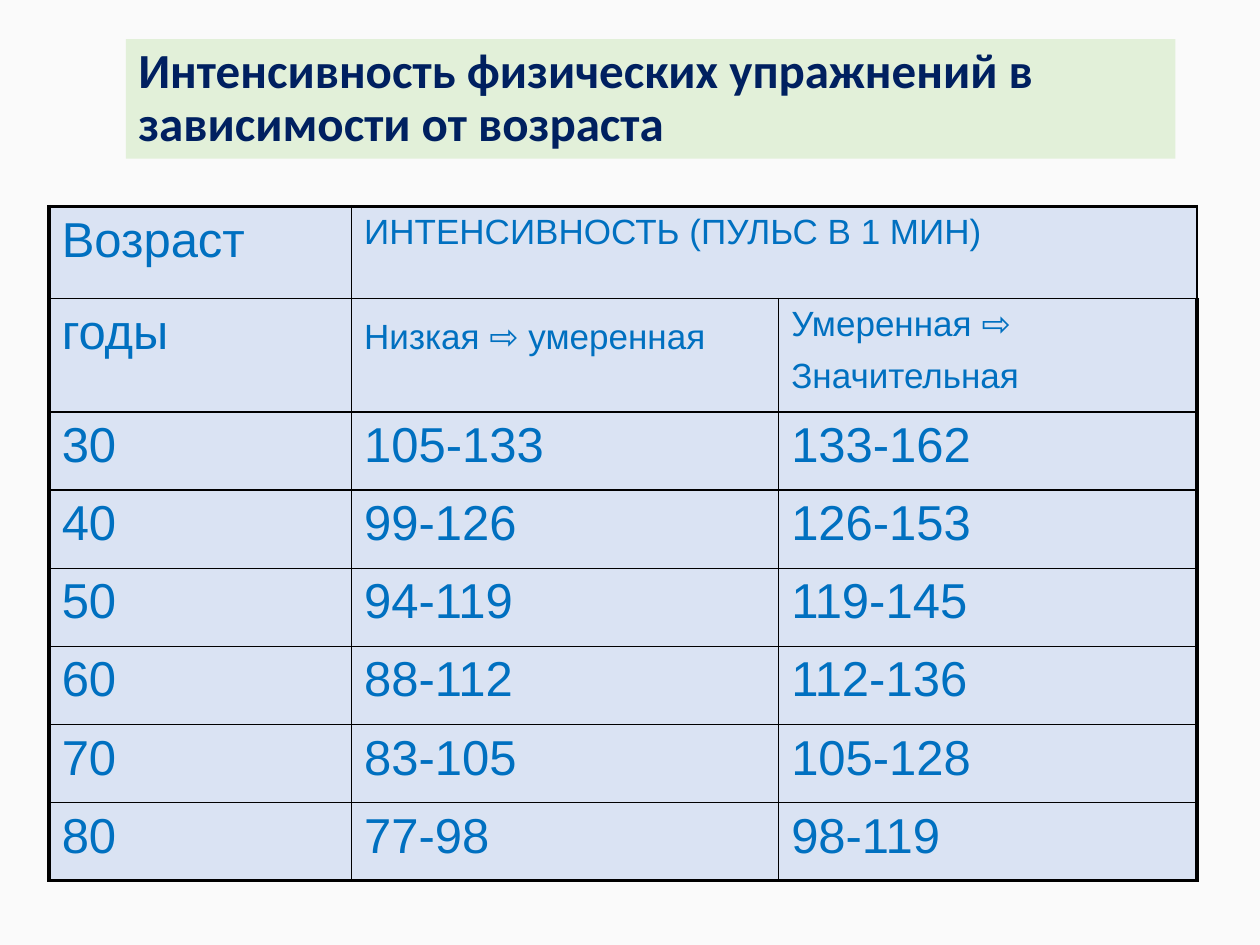
import lxml.etree
import pptx
import pptx.dml.color
import pptx.enum.text
import pptx.oxml.ns
import pptx.util

Inches, Pt = pptx.util.Inches, pptx.util.Pt
HUES = {"page": "FAFAFA", "band": "E2F0D9", "title": "002060",
        "cell": "DAE3F3", "text": "0070C0", "line": "000000"}
BIG, SMALL = 28, 20
THICK, THIN = 2.25, 1


class Deck:
    """Holds the style and the current slide."""

    def __init__(self):
        self.file = pptx.Presentation()
        self.file.slide_width, self.file.slide_height = Inches(10), Inches(7.5)
        self.slide = self.file.slides.add_slide(self.file.slide_layouts[6])
        self.paint(self.slide.background.fill, "page")

    def paint(self, fill, hue):
        fill.solid()
        fill.fore_color.rgb = pptx.dml.color.RGBColor.from_string(HUES[hue])

    def style(self, font, face, size, hue, bold=False):
        font.name, font.size, font.bold = face, Pt(size), bold
        font.color.rgb = pptx.dml.color.RGBColor.from_string(HUES[hue])

    def title(self, text, box):
        shape = self.slide.shapes.add_textbox(*map(Inches, box))
        self.paint(shape.fill, "band")
        frame = shape.text_frame
        frame.word_wrap = True
        frame.vertical_anchor = pptx.enum.text.MSO_ANCHOR.MIDDLE
        para = frame.paragraphs[0]
        para.text, para.line_spacing = text, 0.9
        self.style(para.font, "Calibri", BIG, "title", True)

    def edge(self, cell, side, width):
        name = pptx.oxml.ns.qn
        line = lxml.etree.SubElement(cell._tc.get_or_add_tcPr(),
                                     name("a:ln" + side), w=str(Pt(width)))
        fill = lxml.etree.SubElement(line, name("a:solidFill"))
        lxml.etree.SubElement(fill, name("a:srgbClr"), val=HUES["line"])

    def table(self, rows, place, wides, highs, small):
        size = sum(wides), sum(highs)
        frame = self.slide.shapes.add_table(
            len(rows), len(wides), *map(Inches, place + size))
        grid = frame.table
        for col, wide in zip(grid.columns, wides):
            col.width = Inches(wide)
        for row, high in zip(grid.rows, highs):
            row.height = Inches(high)
        end, last = len(rows) - 1, len(wides) - 1
        for r, row in enumerate(rows):
            for c, text in enumerate(row):
                cell = grid.cell(r, c)
                # Outer edges are thick, inner ones thin
                outer = {"L": c == 0, "R": c == last, "T": r == 0, "B": r == end}
                for side, out in outer.items():
                    self.edge(cell, side, THICK if out else THIN)
                self.paint(cell.fill, "cell")
                if text:
                    para = cell.text_frame.paragraphs[0]
                    run = para.add_run()
                    run.text = text
                    self.style(para.font, "Arial", BIG, "text")
                    if (r, c) in small:
                        run.font.size = Pt(SMALL)
                    if r == 1 and c:
                        # A full-size space sets the height of the last line
                        para.add_run().text = " "
        return grid


def main():
    deck = Deck()

    # Heading band
    deck.title("Интенсивность физических упражнений в зависимости от возраста",
               (1, 0.31, 8.33, 0.95))

    # Pulse by age
    rows = [
        ("Возраст", "ИНТЕНСИВНОСТЬ (ПУЛЬС В 1 МИН)", ""),
        ("годы", "Низкая ⇨ умеренная", "Умеренная ⇨ Значительная"),
        ("30", "105-133", "133-162"),
        ("40", "99-126", "126-153"),
        ("50", "94-119", "119-145"),
        ("60", "88-112", "112-136"),
        ("70", "83-105", "105-128"),
        ("80", "77-98", "98-119"),
    ]
    grid = deck.table(rows, (0.39, 1.64), (2.4, 3.39, 3.32),
                      (0.73, 0.84) + (0.62,) * 6, {(0, 1), (1, 1), (1, 2)})
    grid.cell(0, 1).merge(grid.cell(0, 2))

    deck.file.save("out.pptx")


if __name__ == "__main__":
    main()
